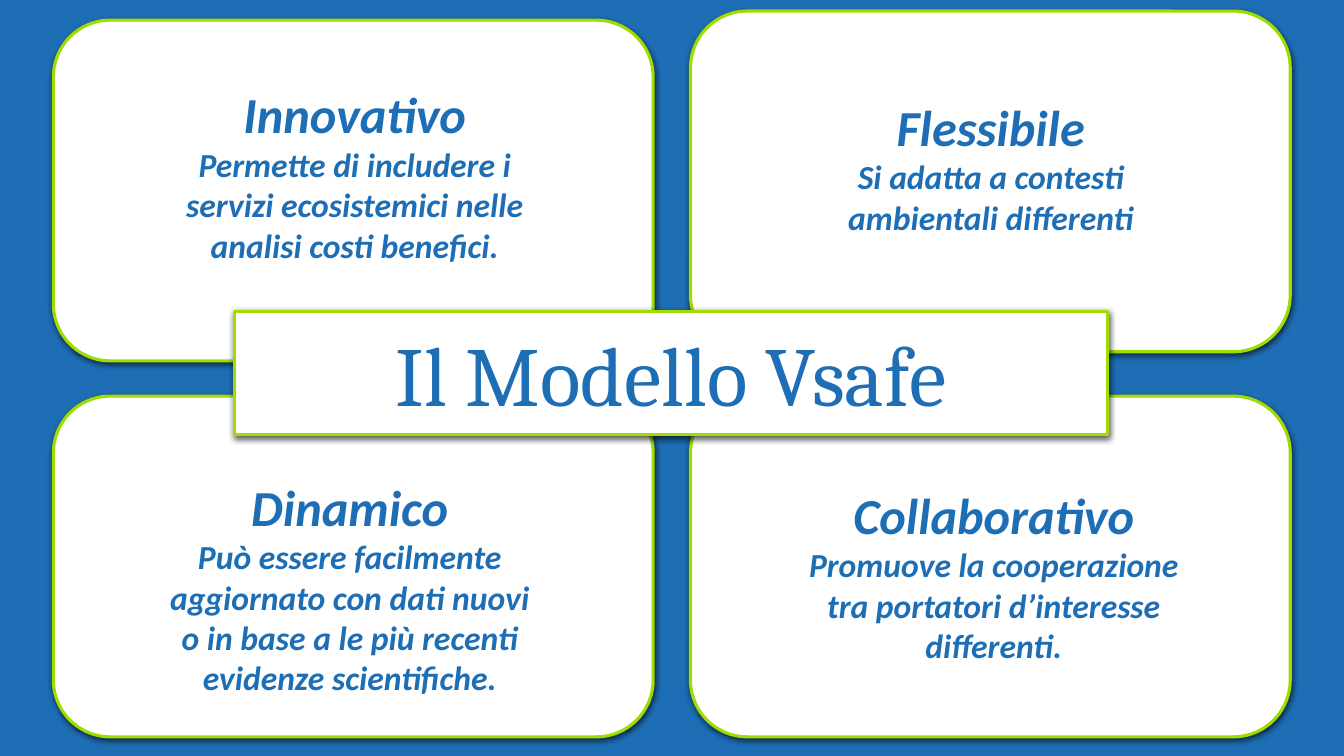
from dataclasses import dataclass

from lxml.etree import SubElement
from pptx import Presentation
from pptx.dml.color import RGBColor
from pptx.enum.shapes import MSO_SHAPE
from pptx.enum.text import MSO_ANCHOR, MSO_AUTO_SIZE, PP_ALIGN
from pptx.oxml import parse_xml
from pptx.oxml.ns import nsdecls, qn
from pptx.util import Pt


@dataclass(frozen=True)
class Theme:
    blue: RGBColor = RGBColor(0x1E, 0x6E, 0xB6)
    green: RGBColor = RGBColor(0xA0, 0xDC, 0x02)
    white: RGBColor = RGBColor(0xFF, 0xFF, 0xFF)
    title_font: str = "Cambria"
    body_font: str = "Calibri"
    title_size: int = 60
    heading_size: int = 36
    body_size: int = 24
    border: float = 2.25


@dataclass(frozen=True)
class Box:
    left: float
    top: float
    width: float
    height: float

    def place(self, shape):
        shape.left, shape.top = Pt(self.left), Pt(self.top)
        shape.width, shape.height = Pt(self.width), Pt(self.height)

    def lengths(self):
        return [Pt(n) for n in (self.left, self.top, self.width, self.height)]


THEME = Theme()
CARD_WIDTH, CARD_HEIGHT = 428.4, 243.36
LEFT_COLUMN, RIGHT_COLUMN, BOTTOM_ROW = 38.16, 493.2, 282.96
TEXT_WIDTH, HEADING_HEIGHT, LINE_HEIGHT = 288, 50.4, 29.3

# Card left and top, text offset inside the card, text lines, heading, sentence
CARDS = [
    (LEFT_COLUMN, BOTTOM_ROW, 67.68, 53.28, 4, "Dinamico",
     "Può essere facilmente aggiornato con dati nuovi o in base a le più "
     "recenti evidenze scientifiche."),
    (RIGHT_COLUMN, BOTTOM_ROW, 72.72, 59.04, 3, "Collaborativo",
     "Promuove la cooperazione tra portatori d’interesse differenti."),
    (RIGHT_COLUMN, 7.92, 70.56, 56.88, 2, "Flessibile",
     "Si adatta a contesti ambientali differenti"),
    (LEFT_COLUMN, 14.4, 71.28, 41.76, 3, "Innovativo",
     "Permette di includere i servizi ecosistemici nelle analisi costi benefici."),
]


def style_panel(shape):
    """White panel with a green border and a soft shadow below."""
    shape.fill.solid()
    shape.fill.fore_color.rgb = THEME.white
    shape.line.color.rgb = THEME.green
    shape.line.width = Pt(THEME.border)
    shape.shadow.inherit = False
    effects = shape._element.spPr.find(qn("a:effectLst"))
    shadow = SubElement(effects, qn("a:outerShdw"), blurRad=str(Pt(4.5)),
                        dist=str(Pt(1.5)), dir="5400000", rotWithShape="0")
    color = SubElement(shadow, qn("a:srgbClr"), val="000000")
    SubElement(color, qn("a:alpha"), val="63000")


def format_paragraph(para, font_name, size, emphasis):
    para.alignment = PP_ALIGN.CENTER
    for span in para.runs:
        span.font.name = font_name
        span.font.size = Pt(size)
        span.font.bold = span.font.italic = emphasis
        span.font.color.rgb = THEME.blue


def add_card(slide, box, text_left, text_top, lines, heading, sentence):
    # Panel
    panel = slide.shapes.add_shape(MSO_SHAPE.ROUNDED_RECTANGLE, *box.lengths())
    style_panel(panel)
    # Heading and sentence
    text_box = Box(box.left + text_left, box.top + text_top,
                   TEXT_WIDTH, HEADING_HEIGHT + lines * LINE_HEIGHT)
    frame = slide.shapes.add_textbox(*text_box.lengths()).text_frame
    frame.word_wrap = True
    frame.auto_size = MSO_AUTO_SIZE.SHAPE_TO_FIT_TEXT
    frame.text = f"{heading}\n{sentence}"
    for para, size in zip(frame.paragraphs, (THEME.heading_size, THEME.body_size)):
        format_paragraph(para, THEME.body_font, size, True)


def add_title(slide, box, text):
    title = slide.shapes.title
    box.place(title)
    # Rounded outline, in front of the cards
    title._element.spPr.append(parse_xml(
        f'<a:prstGeom {nsdecls("a")} prst="roundRect"><a:avLst/></a:prstGeom>'))
    slide.shapes._spTree.append(title._element)
    style_panel(title)
    frame = title.text_frame
    frame.text = text
    frame.word_wrap = True
    frame.auto_size = MSO_AUTO_SIZE.NONE
    frame.vertical_anchor = MSO_ANCHOR.MIDDLE
    format_paragraph(frame.paragraphs[0], THEME.title_font, THEME.title_size, False)


def build_model_slide(deck):
    slide = deck.slides.add_slide(deck.slide_layouts.get_by_name("Title Only"))
    slide.background.fill.solid()
    slide.background.fill.fore_color.rgb = THEME.blue
    for left, top, *content in CARDS:
        add_card(slide, Box(left, top, CARD_WIDTH, CARD_HEIGHT), *content)
    add_title(slide, Box(167.76, 222.48, 623.52, 87.84), "Il Modello Vsafe")


def main():
    deck = Presentation()
    deck.slide_width, deck.slide_height = Pt(960), Pt(540)
    build_model_slide(deck)
    deck.save("out.pptx")


if __name__ == "__main__":
    main()
